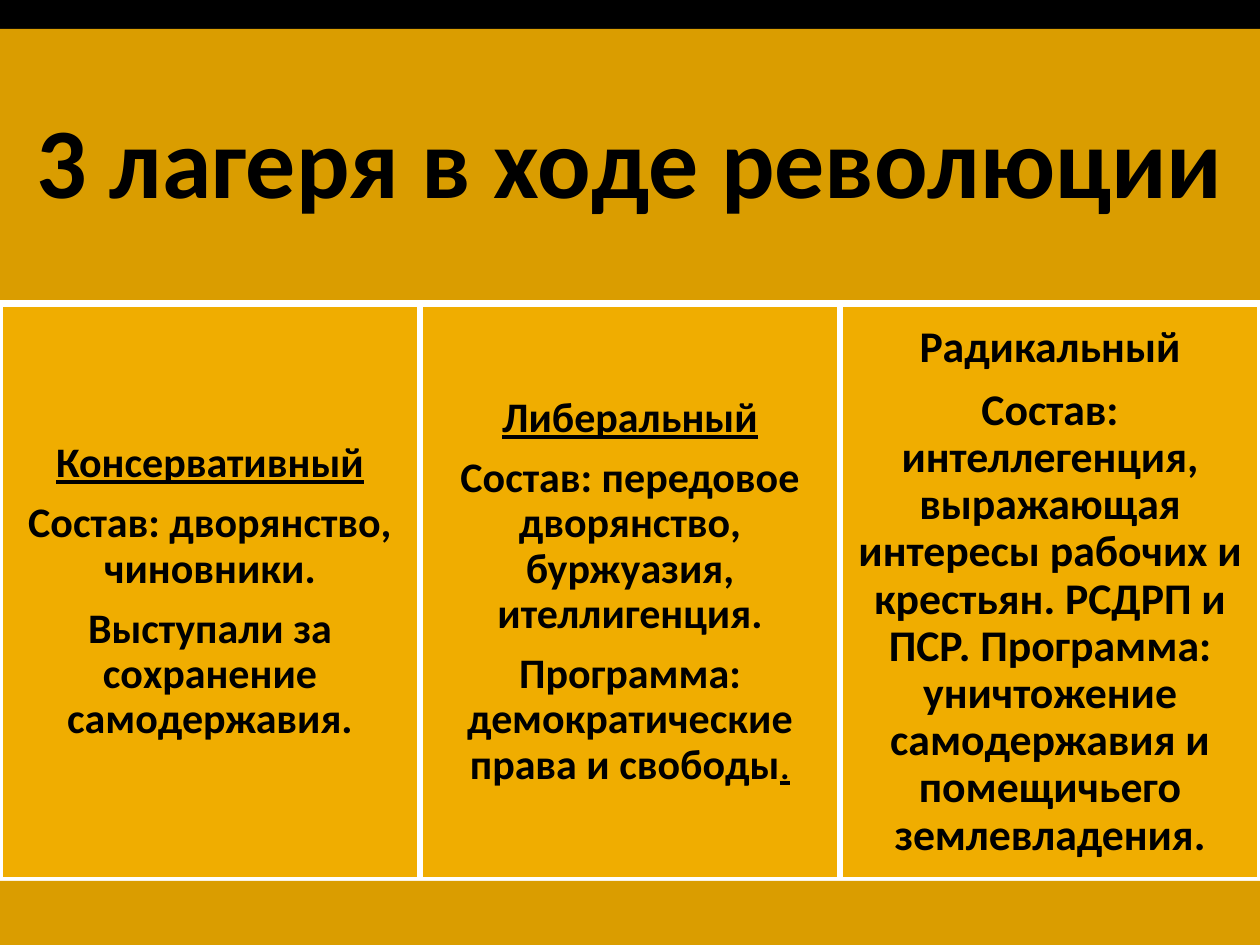
from pptx import Presentation
from pptx import util as u
from pptx.dml.color import RGBColor
from pptx.enum import shapes, text

WIDTH, HEIGHT = 10, 7.5
TITLE_TOP, CAMPS_TOP, FOOTER_TOP = 0.23, 2.41, 6.99
BLACK, WHITE, DARK_GOLD, GOLD = "000000", "FFFFFF", "DA9D00", "F0AD00"

# Each camp: text size, heading underlined, paragraphs, underlined ending
CAMPS = [
    (24, True, ["Консервативный",
                "Состав: дворянство, чиновники.",
                "Выступали за сохранение самодержавия."], ""),
    (24, True, ["Либеральный",
                "Состав: передовое дворянство, буржуазия, ителлигенция.",
                "Программа: демократические права и свободы"], "."),
    (25, False, ["Радикальный",
                 "Состав: интеллегенция, выражающая интересы рабочих и "
                 "крестьян. РСДРП и ПСР. Программа: уничтожение "
                 "самодержавия и помещичьего землевладения."], ""),
]


def paint(target, color):
    target.solid()
    target.fore_color.rgb = RGBColor.from_string(color)


def add_box(page, left, top, width, height, color, border=None):
    box = page.shapes.add_shape(shapes.MSO_SHAPE.RECTANGLE, u.Inches(left),
                                u.Inches(top), u.Inches(width), u.Inches(height))
    box.shadow.inherit = False
    paint(box.fill, color)
    if border:
        paint(box.line.fill, border)
        box.line.width = u.Pt(3.78)
    else:
        box.line.fill.background()
    return box


def write(box, lines, size, inset):
    frame = box.text_frame
    frame.word_wrap = True
    frame.vertical_anchor = text.MSO_ANCHOR.MIDDLE
    frame.margin_left = frame.margin_right = u.Inches(inset)
    frame.margin_top = frame.margin_bottom = u.Inches(inset)
    frame.text = "\n".join(lines)
    for para in frame.paragraphs:
        para.alignment = text.PP_ALIGN.CENTER
        para.line_spacing = 0.9
        para.space_after = u.Pt(0.35 * size)
        para.font.name = "Calibri"
        para.font.size = u.Pt(size)
        para.font.bold = True
        paint(para.font.fill, BLACK)
    return frame.paragraphs


def add_camp(page, column, size, underlined, lines, ending):
    width = WIDTH / len(CAMPS)
    box = add_box(page, column * width, CAMPS_TOP, width,
                  FOOTER_TOP - CAMPS_TOP, GOLD, WHITE)
    paras = write(box, lines, size, 0.1)
    if underlined:
        paras[0].runs[0].font.underline = True
    if ending:
        span = paras[-1].add_run()
        span.text = ending
        span.font.bold = False
        span.font.underline = True


def main():
    deck = Presentation()
    deck.slide_width, deck.slide_height = u.Inches(WIDTH), u.Inches(HEIGHT)
    page = deck.slides.add_slide(deck.slide_layouts[6])
    paint(page.background.fill, WHITE)

    # Black band behind the title
    add_box(page, 0, 0, WIDTH, 1.57, BLACK)

    # Title
    title = add_box(page, 0, TITLE_TOP, WIDTH, CAMPS_TOP - TITLE_TOP, DARK_GOLD)
    write(title, ["3 лагеря в ходе революции"], 57, 0.24)

    # Three camps
    for column, camp in enumerate(CAMPS):
        add_camp(page, column, *camp)

    # Footer band
    add_box(page, 0, FOOTER_TOP, WIDTH, HEIGHT - FOOTER_TOP, DARK_GOLD)

    deck.save("out.pptx")


if __name__ == "__main__":
    main()
